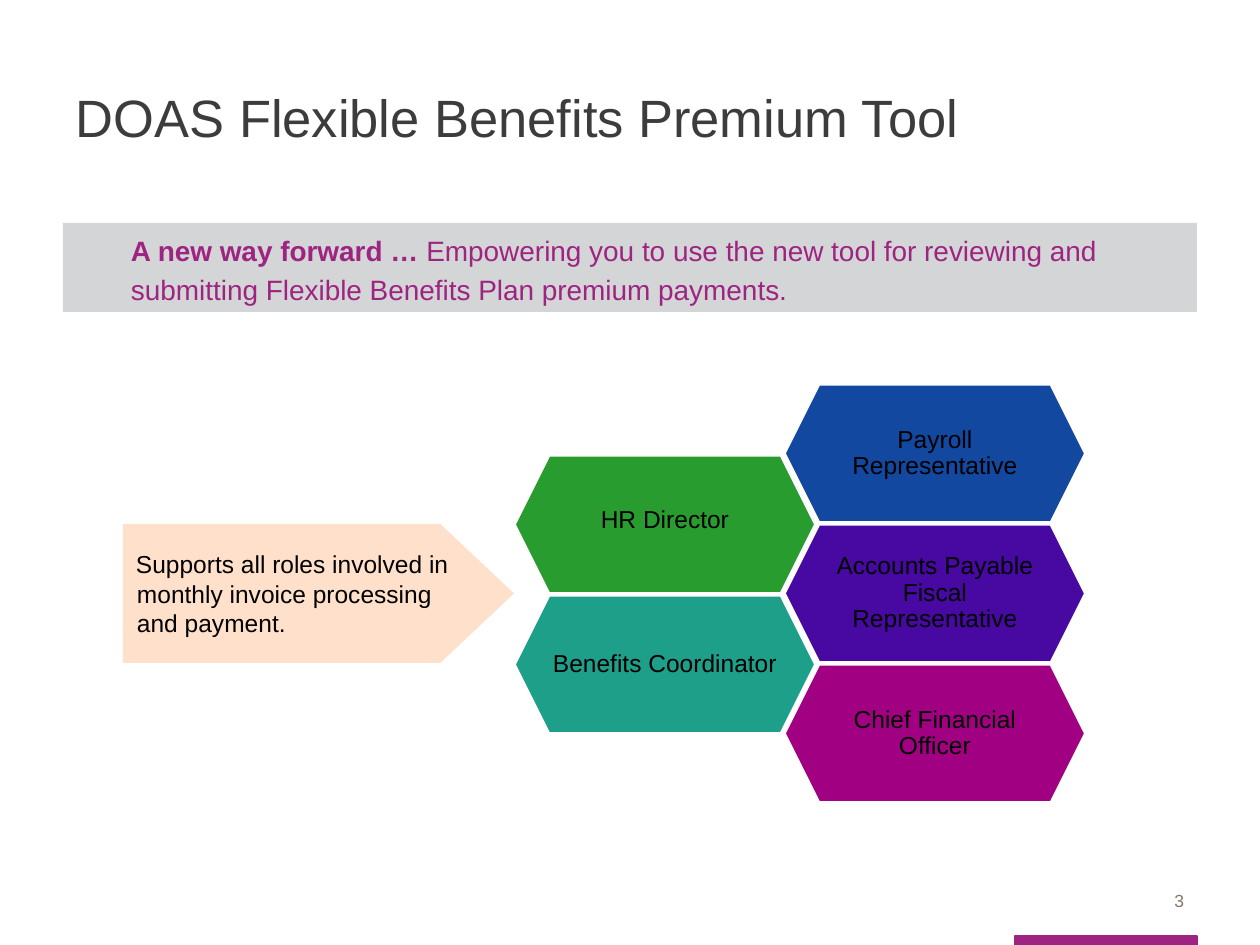
from pptx import Presentation, util as u
from pptx.dml.color import RGBColor
from pptx.enum import shapes, text

EMU_PER_PX = 914400 / 126
COLORS = {
    "magenta": "9E2482", "banner": "D4D5D6", "peach": "FFE0CA",
    "title": "3C3C3C", "number": "897865", "black": "000000", "white": "FFFFFF",
    "green": "299C2F", "teal": "1D9F8A", "blue": "1348A0",
    "violet": "4709A1", "purple": "A10082",
}
KIND = shapes.MSO_SHAPE
ALIGN = text.PP_ALIGN
ANCHOR = text.MSO_ANCHOR


def px(length):
    return u.Emu(round(length * EMU_PER_PX))


def add_block(box, runs=(), kind=None, fill=None, line=None, line_width=1,
              size=14, color="black", align=ALIGN.LEFT, anchor=ANCHOR.MIDDLE,
              insets=(13, 6, 13, 6), margin=0, indent=0, spacing=1, after=0):
    """Add a shape, or a text box if kind is None; runs are (words, bold) pairs."""
    place = [px(length) for length in box]
    if kind is None:
        block = slide.shapes.add_textbox(*place)
    else:
        block = slide.shapes.add_shape(kind, *place)
        block.shadow.inherit = False
        block.fill.solid()
        block.fill.fore_color.rgb = RGBColor.from_string(COLORS[fill])
        if line:
            block.line.color.rgb = RGBColor.from_string(COLORS[line])
            block.line.width = u.Pt(line_width)
        else:
            block.line.fill.background()
    frame = block.text_frame
    frame.word_wrap = True
    frame.vertical_anchor = anchor
    (frame.margin_left, frame.margin_top,
     frame.margin_right, frame.margin_bottom) = [px(inset) for inset in insets]
    paragraph = frame.paragraphs[0]
    paragraph.alignment = align
    paragraph.line_spacing = spacing
    paragraph.space_after = u.Pt(after)
    properties = paragraph._p.get_or_add_pPr()
    properties.set("marL", str(px(margin)))
    properties.set("indent", str(px(indent)))
    for words, bold in runs:
        run = paragraph.add_run()
        run.text = words
        run.font.name = "Arial"
        run.font.size = u.Pt(size)
        run.font.bold = bold
        run.font.color.rgb = RGBColor.from_string(COLORS[color])
    return block


deck = Presentation()
deck.slide_width, deck.slide_height = px(1260), px(945)
slide = deck.slides.add_slide(deck.slide_layouts[6])

add_block((1015, 936, 182, 9), kind=KIND.RECTANGLE, fill="magenta",
          line="magenta", line_width=0.75)

# Roles, in two interlocking columns of hexagons
ROLE_WIDTH, ROLE_HEIGHT, ROLE_PITCH = 302, 139, 140
role_columns = [
    (514, 455, [("HR Director", "green", ANCHOR.BOTTOM, 43),
                ("Benefits Coordinator", "teal", ANCHOR.MIDDLE, 0)]),
    (784, 384, [("Payroll Representative", "blue", ANCHOR.MIDDLE, 0),
                ("Accounts Payable Fiscal Representative", "violet", ANCHOR.MIDDLE, 0),
                ("Chief Financial Officer", "purple", ANCHOR.MIDDLE, 0)]),
]
for left, top, roles in role_columns:
    for row, (role, fill, anchor, bottom) in enumerate(roles):
        add_block((left, top + row * ROLE_PITCH, ROLE_WIDTH, ROLE_HEIGHT),
                  [(role, False)], kind=KIND.HEXAGON, fill=fill, line="white",
                  line_width=2, align=ALIGN.CENTER, anchor=anchor,
                  insets=(0, 0, 0, bottom), spacing=0.9)

support = add_block(
    (123, 524, 391, 139),
    [("Supports all roles involved in monthly invoice processing and payment.", False)],
    kind=KIND.PENTAGON, fill="peach", margin=1, indent=-1)
support.adjustments[0] = 0.53

add_block((63, 38, 1134, 157), [("DOAS Flexible Benefits Premium Tool", False)],
          size=30, color="title")
add_block((1015, 876, 182, 50), [("3", False)], size=10, color="number",
          align=ALIGN.RIGHT)
add_block((63, 223, 1134, 89),
          [("A new way forward … ", True),
           ("Empowering you to use the new tool for reviewing and submitting "
            "Flexible Benefits Plan premium payments.", False)],
          kind=KIND.RECTANGLE, fill="banner", size=16, color="magenta",
          insets=(13, 25, 13, 25), margin=55, spacing=1.14, after=12)

deck.save("out.pptx")
